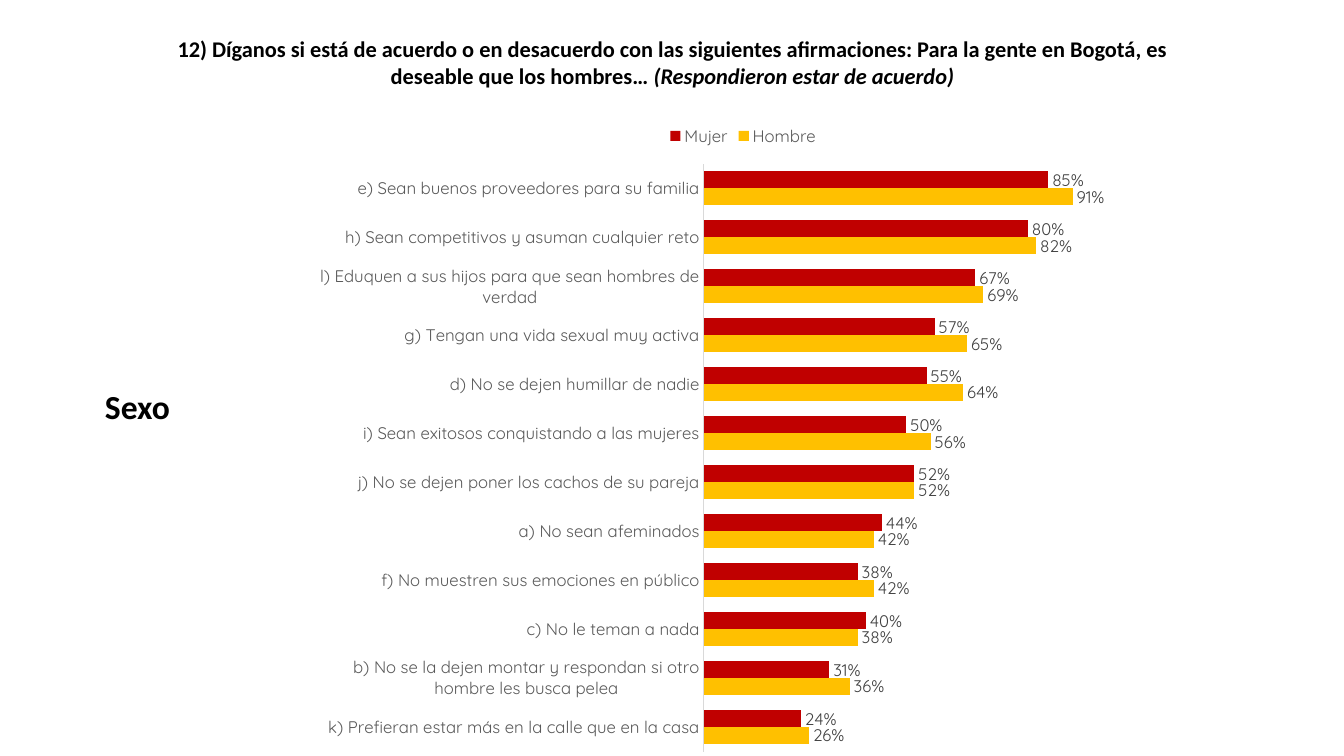
from dataclasses import dataclass

from lxml.etree import SubElement
from pptx import Presentation
from pptx.chart.data import CategoryChartData
from pptx.dml.color import RGBColor
from pptx.enum.chart import XL_CHART_TYPE as CT, XL_LABEL_POSITION as LP
from pptx.enum.chart import XL_LEGEND_POSITION as LG, XL_TICK_MARK as TM
from pptx.enum.text import MSO_AUTO_SIZE as FIT, PP_ALIGN as AL
from pptx.oxml.ns import qn
from pptx.util import Emu, Pt

PX = 914400 / 100.8


@dataclass
class Run:
    text: str
    italic: bool = False


@dataclass
class Label:
    box: tuple[int, int, int, int]
    runs: list[Run]
    size: int
    align: AL
    wrap: bool


@dataclass
class Group:
    name: str
    color: str
    values: list[int]


LABELS = [
    Label((127, 30, 1091, 65), [
        Run("12) Díganos si está de acuerdo o en desacuerdo con las siguientes "
            "afirmaciones: Para la gente en Bogotá, es deseable que los hombres… "),
        Run("(Respondieron estar de acuerdo)", True),
    ], 16, AL.CENTER, True),
    Label((95, 381, 86, 50), [Run("Sexo")], 24, AL.LEFT, False),
]
CATEGORIES = [
    "k) Prefieran estar más en la calle que en la casa",
    "b) No se la dejen montar y respondan si otro hombre les busca pelea",
    "c) No le teman a nada",
    "f) No muestren sus emociones en público",
    "a) No sean afeminados",
    "j) No se dejen poner los cachos de su pareja",
    "i) Sean exitosos conquistando a las mujeres",
    "d) No se dejen humillar de nadie",
    "g) Tengan una vida sexual muy activa",
    "l) Eduquen a sus hijos para que sean hombres de verdad",
    "h) Sean competitivos y asuman cualquier reto",
    "e) Sean buenos proveedores para su familia",
]
GROUPS = [
    Group("Hombre", "FFC000", [26, 36, 38, 42, 42, 52, 56, 64, 65, 69, 82, 91]),
    Group("Mujer", "C00000", [24, 31, 40, 38, 44, 52, 50, 55, 57, 67, 80, 85]),
]
CHART_BOX = (320, 114, 844, 639)
PLOT = {"x": 0.453, "y": 0.078, "w": 0.482, "h": 0.92}


def px(*values: int) -> list[Emu]:
    return [Emu(round(v * PX)) for v in values]


def rgb(color: str) -> RGBColor:
    return RGBColor.from_string(color)


def set_font(font, color: str, **values) -> None:
    for name, value in values.items():
        setattr(font, name, value)
    font.color.rgb = rgb(color)


def add_label(s, label: Label) -> None:
    tf = s.shapes.add_textbox(*px(*label.box)).text_frame
    tf.word_wrap = label.wrap
    tf.auto_size = FIT.SHAPE_TO_FIT_TEXT
    p = tf.paragraphs[0]
    p.alignment = label.align
    for run in label.runs:
        r = p.add_run()
        r.text = run.text
        set_font(r.font, "000000", name="Calibri", size=Pt(label.size),
                 bold=True, italic=run.italic)


def place_plot(chart) -> None:
    area = chart.plots[0]._element.getparent()
    layout = area.find(qn("c:layout"))
    if layout is None:
        layout = area.makeelement(qn("c:layout"))
        area.insert(0, layout)
    manual = SubElement(layout, qn("c:manualLayout"))
    values = {"layoutTarget": "inner", "xMode": "edge", "yMode": "edge", **PLOT}
    for tag, value in values.items():
        SubElement(manual, qn(f"c:{tag}")).set("val", str(value))


def add_bars(s) -> None:
    data = CategoryChartData(number_format="0%")
    data.categories = CATEGORIES
    for group in GROUPS:
        data.add_series(group.name, [v / 100 for v in group.values])
    chart = s.shapes.add_chart(CT.BAR_CLUSTERED, *px(*CHART_BOX), data).chart
    text = {"name": "Quicksand", "size": Pt(12)}
    set_font(chart.font, "000000", **text)
    chart.has_title = False
    chart.has_legend = True
    chart.legend.position = LG.TOP
    chart.legend.include_in_layout = False
    set_font(chart.legend.font, "595959", **text)

    axis = chart.category_axis
    axis.major_tick_mark = axis.minor_tick_mark = TM.NONE
    axis.format.line.color.rgb = rgb("D9D9D9")
    axis.format.line.width = Pt(0.75)
    set_font(axis.tick_labels.font, "595959", **text)
    scale = chart.value_axis
    scale.minimum_scale, scale.maximum_scale = 0, 1
    scale.has_major_gridlines = False
    scale.visible = False

    plot = chart.plots[0]
    plot.gap_width, plot.overlap = 90, 0
    plot.vary_by_categories = False
    for series, group in zip(plot.series, GROUPS):
        series.format.fill.solid()
        series.format.fill.fore_color.rgb = rgb(group.color)
        tags = series.data_labels
        tags.show_value = True
        tags.position = LP.OUTSIDE_END
        tags.number_format = "0%"
        tags.number_format_is_linked = False
        set_font(tags.font, "404040", **text)
    place_plot(chart)


def main() -> None:
    prs = Presentation()
    prs.slide_width, prs.slide_height = px(1344, 756)
    s = prs.slides.add_slide(prs.slide_layouts[6])
    add_bars(s)
    for label in LABELS:
        add_label(s, label)
    prs.save("out.pptx")


if __name__ == "__main__":
    main()
